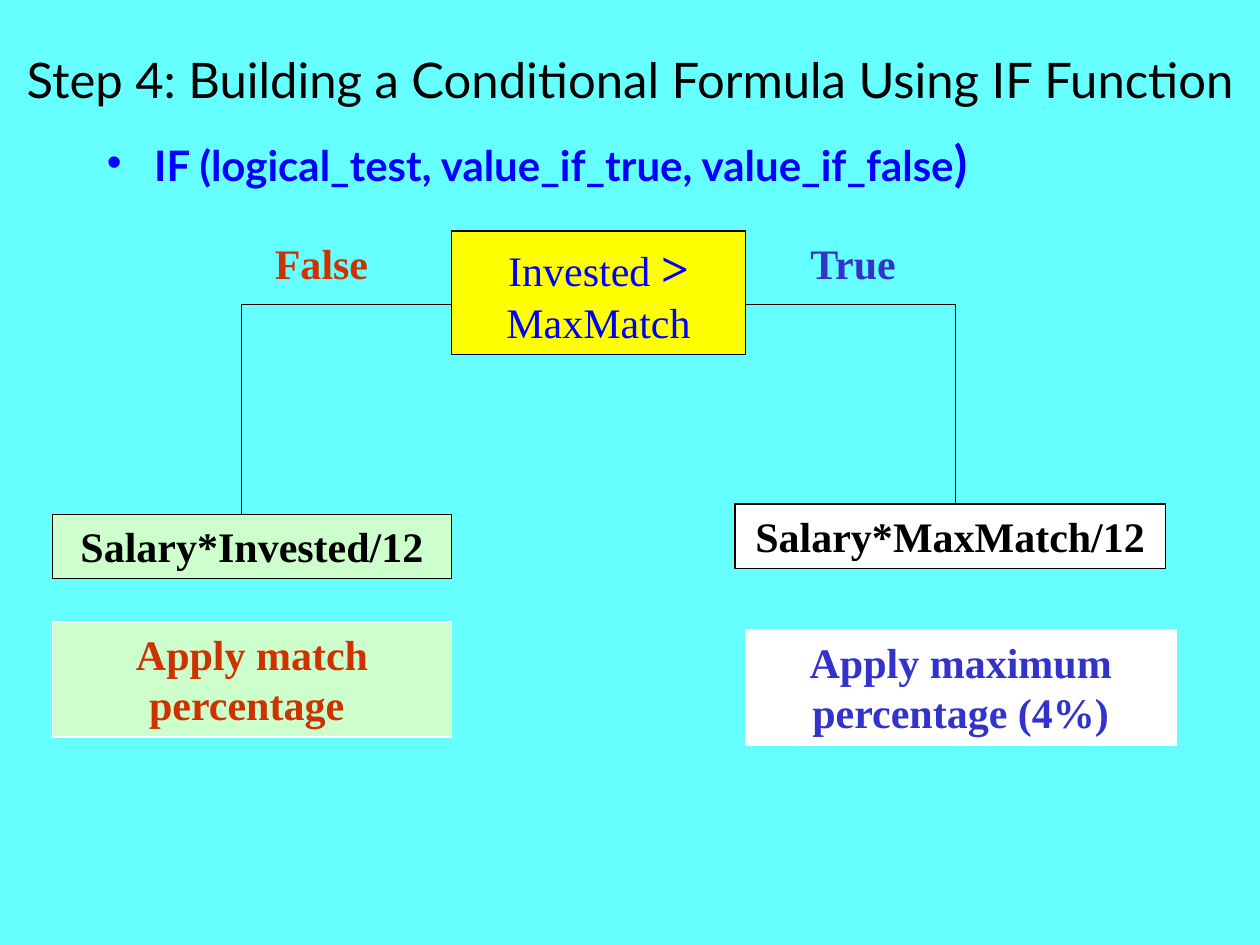
import dataclasses

import lxml.etree
import pptx
import pptx.dml.color
import pptx.enum.shapes
import pptx.enum.text
import pptx.oxml.ns
import pptx.util

Pt = pptx.util.Pt
qn = pptx.oxml.ns.qn
Align = pptx.enum.text.PP_ALIGN
Anchor = pptx.enum.text.MSO_ANCHOR

COLORS = {
    "background": "66FFFF",
    "black": "000000",
    "white": "FFFFFF",
    "yellow": "FFFF00",
    "mint": "CCFFCC",
    "formula": "0000FF",
    "false": "CC3300",
    "true": "3333CC",
}
SANS, SERIF = "Lato", "Times New Roman"


@dataclasses.dataclass(frozen=True)
class Run:
    text: str
    size: float = 24
    bold: bool = True


@dataclasses.dataclass(frozen=True)
class Area:
    left: float
    top: float
    width: float
    height: float


@dataclasses.dataclass(frozen=True)
class Box:
    area: Area
    runs: list[Run]
    ink: str
    fill: str
    border: str = "black"


@dataclasses.dataclass(frozen=True)
class Line:
    x1: float
    y1: float
    x2: float
    y2: float


def rgb(name: str) -> pptx.dml.color.RGBColor:
    return pptx.dml.color.RGBColor.from_string(COLORS[name])


def write_text(shape, runs: list[Run], *, ink: str, font: str = SERIF,
               align=Align.CENTER, anchor=Anchor.TOP,
               space_before: int = 50, bullet_indent: float = 0) -> None:
    """Fill a shape with one paragraph; space_before is a percentage of the line."""
    frame = shape.text_frame
    frame.word_wrap = True
    frame.vertical_anchor = anchor
    paragraph = frame.paragraphs[0]
    paragraph.alignment = align
    properties = paragraph._p.get_or_add_pPr()
    if space_before:
        spacing = lxml.etree.SubElement(properties, qn("a:spcBef"))
        lxml.etree.SubElement(spacing, qn("a:spcPct"), val=str(space_before * 1000))
    if bullet_indent:
        properties.set("marL", str(Pt(bullet_indent)))
        properties.set("indent", str(-Pt(bullet_indent)))
        lxml.etree.SubElement(properties, qn("a:buFont"), typeface="Arial")
        lxml.etree.SubElement(properties, qn("a:buChar"), char="•")
    for part in runs:
        run = paragraph.add_run()
        run.text = part.text
        run.font.name = font
        run.font.size = Pt(part.size)
        run.font.bold = part.bold
        run.font.color.rgb = rgb(ink)


def add_label(slide, area: Area, runs: list[Run], **text_format) -> None:
    label = slide.shapes.add_textbox(*map(Pt, dataclasses.astuple(area)))
    write_text(label, runs, **text_format)


def add_box(slide, box: Box) -> None:
    rectangle = slide.shapes.add_shape(
        pptx.enum.shapes.MSO_SHAPE.RECTANGLE,
        *map(Pt, dataclasses.astuple(box.area)))
    rectangle.shadow.inherit = False
    rectangle.fill.solid()
    rectangle.fill.fore_color.rgb = rgb(box.fill)
    rectangle.line.color.rgb = rgb(box.border)
    rectangle.line.width = Pt(0.75)
    write_text(rectangle, box.runs, ink=box.ink)


def add_line(slide, line: Line) -> None:
    branch = slide.shapes.add_connector(
        pptx.enum.shapes.MSO_CONNECTOR.STRAIGHT,
        *map(Pt, dataclasses.astuple(line)))
    branch.line.color.rgb = rgb("black")
    branch.line.width = Pt(0.75)
    lxml.etree.SubElement(branch._element.spPr, qn("a:effectLst"))


BOXES = [
    Box(Area(258, 132, 168, 70.5),
        [Run("Invested ", bold=False), Run(">", 28), Run(" MaxMatch", bold=False)],
        "formula", "yellow"),
    Box(Area(420, 288, 246, 36.75), [Run("Salary*MaxMatch/12")], "black", "white"),
    Box(Area(30, 294, 228, 36.75), [Run("Salary*Invested/12")], "black", "mint"),
    Box(Area(30, 355.5, 228, 65.75), [Run("Apply match percentage ")],
        "false", "mint", "white"),
    Box(Area(426, 360, 246, 65.75), [Run("Apply maximum percentage (4%)")],
        "true", "white", "white"),
]
BRANCH_TOP = 174
BRANCHES = [
    Line(258, BRANCH_TOP, 138, BRANCH_TOP),
    Line(138, BRANCH_TOP, 138, 294),
    Line(546, BRANCH_TOP, 426, BRANCH_TOP),
    Line(546, BRANCH_TOP, 546, 288),
]


def main() -> None:
    deck = pptx.Presentation()
    deck.slide_width, deck.slide_height = Pt(720), Pt(540)
    slide = deck.slides.add_slide(deck.slide_layouts[6])
    slide.background.fill.solid()
    slide.background.fill.fore_color.rgb = rgb("background")

    add_label(slide, Area(0, 18, 720, 54),
              [Run("Step 4: Building a Conditional Formula Using IF Function", 28, False)],
              ink="black", font=SANS, anchor=Anchor.MIDDLE, space_before=0)
    add_label(slide, Area(54, 72, 612, 42),
              [Run("IF (logical_test, value_if_true, value_if_false"), Run(")", 28)],
              ink="formula", font=SANS, align=Align.LEFT,
              space_before=20, bullet_indent=27)
    for box in BOXES:
        add_box(slide, box)
    for line in BRANCHES:
        add_line(slide, line)
    for answer, left, ink in (("False", 150, "false"), ("True", 456, "true")):
        add_label(slide, Area(left, 132, 72, 36), [Run(answer)],
                  ink=ink, align=Align.LEFT)

    deck.save("out.pptx")


if __name__ == "__main__":
    main()
